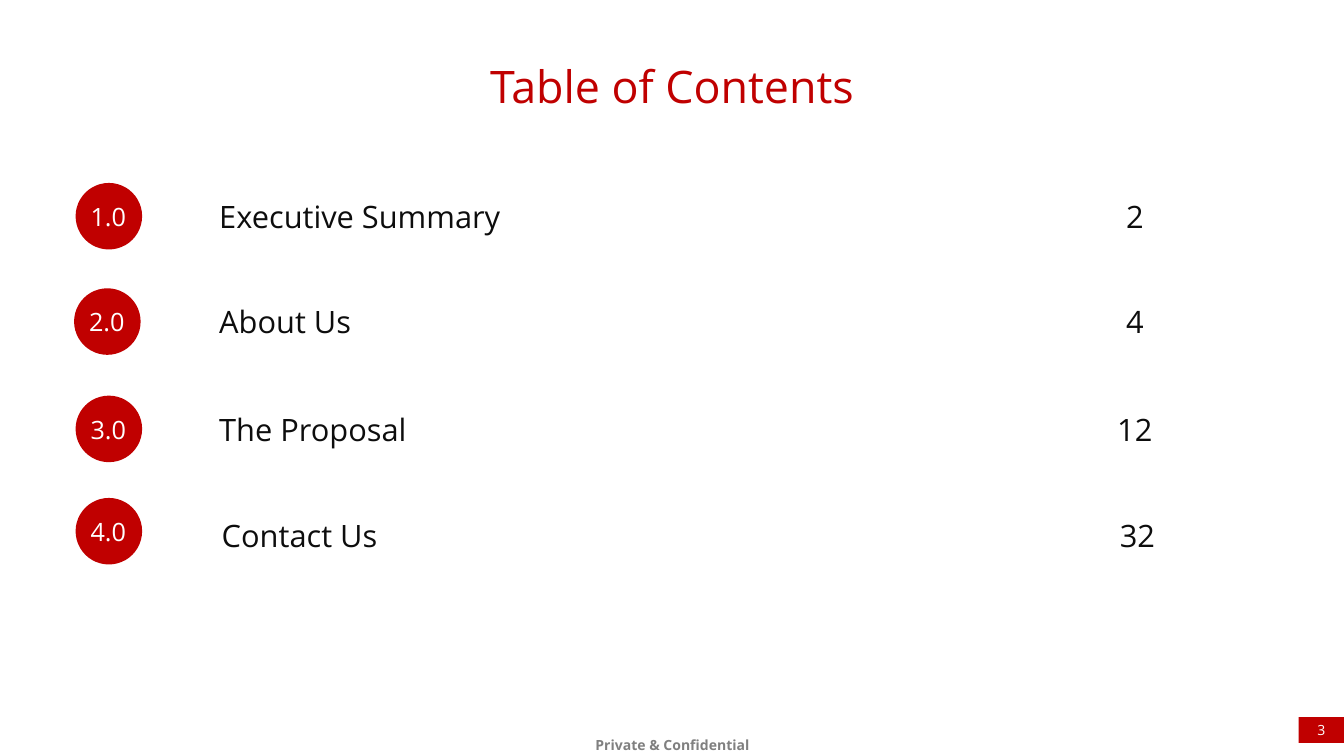
from pptx import Presentation
from pptx.dml.color import RGBColor
from pptx.enum.shapes import MSO_SHAPE
from pptx.enum.text import MSO_ANCHOR, PP_ALIGN
from pptx.oxml.ns import qn
from pptx.util import Inches, Pt
from lxml import etree

CENTER, LEFT = PP_ALIGN.CENTER, PP_ALIGN.LEFT
TOP, MIDDLE = MSO_ANCHOR.TOP, MSO_ANCHOR.MIDDLE
RECT, OVAL = MSO_SHAPE.RECTANGLE, MSO_SHAPE.OVAL
FONT = "Open Sans"
COLORS = {"red": "C00000", "white": "FFFFFF", "ink": "0D0D0D", "gray": "808080"}

prs = Presentation()
prs.slide_width, prs.slide_height = Inches(26.67), Inches(15)
s = prs.slides.add_slide(prs.slide_layouts[6])


def add_red_shape(kind, *box):
    sp = s.shapes.add_shape(kind, *map(Inches, box))
    sp.shadow.inherit = False
    sp.fill.solid()
    sp.fill.fore_color.rgb = RGBColor.from_string(COLORS["red"])
    sp.line.fill.background()
    return sp


def set_text(sp, text, size, color, insets, align=CENTER, anchor=TOP, tab=None):
    tf = sp.text_frame
    tf.word_wrap = True
    tf.vertical_anchor = anchor
    tf.margin_left = tf.margin_right = Inches(insets[0])
    tf.margin_top = tf.margin_bottom = Inches(insets[1])
    p = tf.paragraphs[0]
    p.text = text
    p.alignment = align
    if tab:
        tabs = etree.SubElement(p._p.get_or_add_pPr(), qn("a:tabLst"))
        etree.SubElement(tabs, qn("a:tab"), pos=str(Inches(tab)), algn="ctr")
    p.font.name, p.font.size = FONT, Pt(size)
    p.font.color.rgb = RGBColor.from_string(COLORS[color])
    return p


# Footer
sp = s.shapes.add_textbox(Inches(11.53), Inches(14.42), Inches(3.63), Inches(0.78))
p = set_text(sp, "Private & Confidential", 20, "gray", (0.24, 0.12))
p.font.bold = True
p.line_spacing = 1.2

# Title
sp = s.shapes.add_textbox(Inches(1.53), Inches(1.04), Inches(23.61), Inches(1.35))
set_text(sp, "Table of Contents", 64, "red", (0.27, 0.13))

# Page number
sp = add_red_shape(RECT, 25.77, 14.23, 0.9, 0.51)
set_text(sp, "3", 20, "white", (0, 0), anchor=MIDDLE)

# Contents: section, page, circle left and top, entry left and top
entries = [
    ("Executive Summary", 2, 1.5, 3.63, 4.08, 3.79),
    ("About Us", 4, 1.47, 5.72, 4.08, 5.88),
    ("The Proposal", 12, 1.5, 7.85, 4.08, 8.01),
    ("Contact Us", 32, 1.5, 9.88, 4.13, 10.12),
]
for number, (section, page, cx, cy, x, y) in enumerate(entries, 1):
    add_red_shape(OVAL, cx, cy, 1.32, 1.32)
    sp = s.shapes.add_textbox(Inches(cx + 0.03), Inches(cy + 0.22), Inches(1.24), Inches(0.89))
    set_text(sp, f"{number}.0", 36, "white", (0.1, 0.1), anchor=MIDDLE)
    sp = s.shapes.add_textbox(Inches(x), Inches(y), Inches(19.55), Inches(1.01))
    set_text(sp, f"{section}\t{page}", 44, "ink", (0.27, 0.13), LEFT, tab=18.17)

prs.save("out.pptx")
